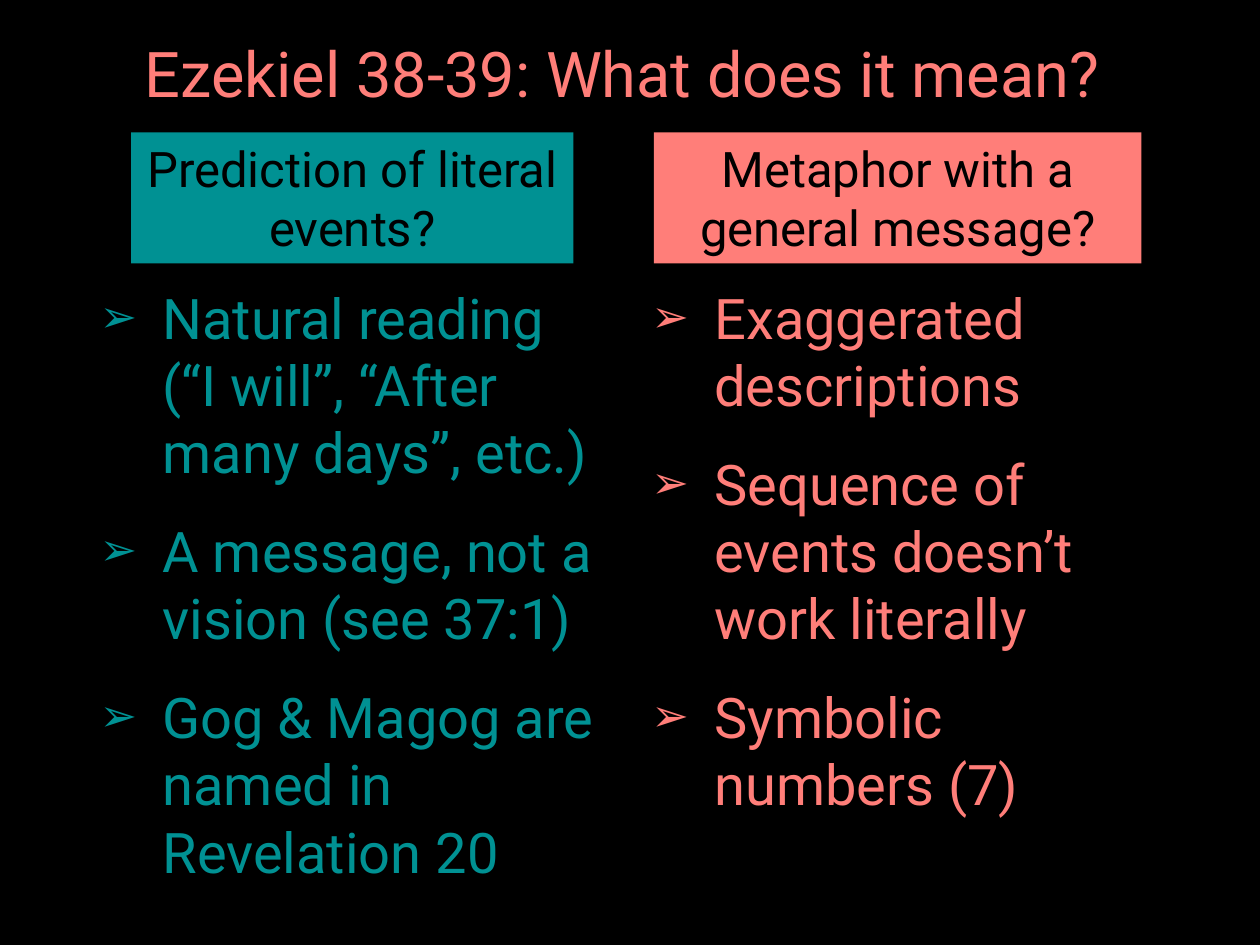
from lxml import etree
from pptx import Presentation
from pptx.dml.color import RGBColor
from pptx.enum import shapes, text
from pptx.oxml.ns import qn
from pptx.util import Inches, Pt

BLACK = RGBColor(0x00, 0x00, 0x00)
TEAL = RGBColor(0x00, 0x91, 0x93)
CORAL = RGBColor(0xFF, 0x7E, 0x79)


def style_paragraph(para, size, color):
    for span in para.runs:
        span.font.name = "Roboto"
        span.font.size = Pt(size)
        span.font.color.rgb = color


def add_arrow_bullet(para):
    """Hang the paragraph behind a small arrowhead; call after setting its spacing."""
    props = para._p.get_or_add_pPr()
    props.set("marL", str(Inches(0.5)))
    props.set("indent", str(-Inches(0.5)))
    etree.SubElement(props, qn("a:buSzPct")).set("val", "80000")
    etree.SubElement(props, qn("a:buChar")).set("char", "➢")


deck = Presentation()
deck.slide_width, deck.slide_height = Inches(10), Inches(7.5)
page = deck.slides.add_slide(deck.slide_layouts[3])
page.background.fill.solid()
page.background.fill.fore_color.rgb = BLACK

title = page.shapes.title
title.left, title.top = Inches(0.69), Inches(0.16)
title.width, title.height = Inches(8.62), Inches(0.9)
title.text_frame.text = "Ezekiel 38-39: What does it mean? "
title.text_frame.auto_size = text.MSO_AUTO_SIZE.NONE
title.text_frame.vertical_anchor = text.MSO_ANCHOR.MIDDLE
heading = title.text_frame.paragraphs[0]
heading.alignment = text.PP_ALIGN.CENTER
heading.line_spacing = 0.9
style_paragraph(heading, 36, CORAL)

# Placeholder index, colour, header text, header left and width, list left and width, points
views = [
    (1, TEAL, "Prediction of literal events?", 1.04, 3.51, 0.69, 4.26,
     ["Natural reading (“I will”, “After many days”, etc.)",
      "A message, not a vision (see 37:1)",
      "Gog & Magog are named in Revelation 20"]),
    (2, CORAL, "Metaphor with a general message?", 5.19, 3.87, 5.07, 4.24,
     ["Exaggerated descriptions",
      "Sequence of events doesn’t work literally",
      "Symbolic numbers (7)"]),
]

for index, color, question, box_left, box_width, list_left, list_width, points in views:
    box = page.shapes.add_shape(shapes.MSO_SHAPE.RECTANGLE, Inches(box_left),
                                Inches(1.05), Inches(box_width), Inches(1.04))
    box.shadow.inherit = False
    box.fill.solid()
    box.fill.fore_color.rgb = color
    box.line.fill.background()
    box.text_frame.text = question
    box.text_frame.word_wrap = True
    box.text_frame.vertical_anchor = text.MSO_ANCHOR.MIDDLE
    para = box.text_frame.paragraphs[0]
    para.alignment = text.PP_ALIGN.CENTER
    para.space_after = Pt(10)
    style_paragraph(para, 28, BLACK)

    body = page.placeholders[index]
    body.left, body.top = Inches(list_left), Inches(2.2)
    body.width, body.height = Inches(list_width), Inches(4.84)
    body.text_frame.text = "\n".join(points)
    body.text_frame.auto_size = text.MSO_AUTO_SIZE.NONE
    for para in body.text_frame.paragraphs:
        para.space_before = Pt(4)
        para.space_after = Pt(14)
        add_arrow_bullet(para)
        style_paragraph(para, 32, color)

deck.save("out.pptx")
